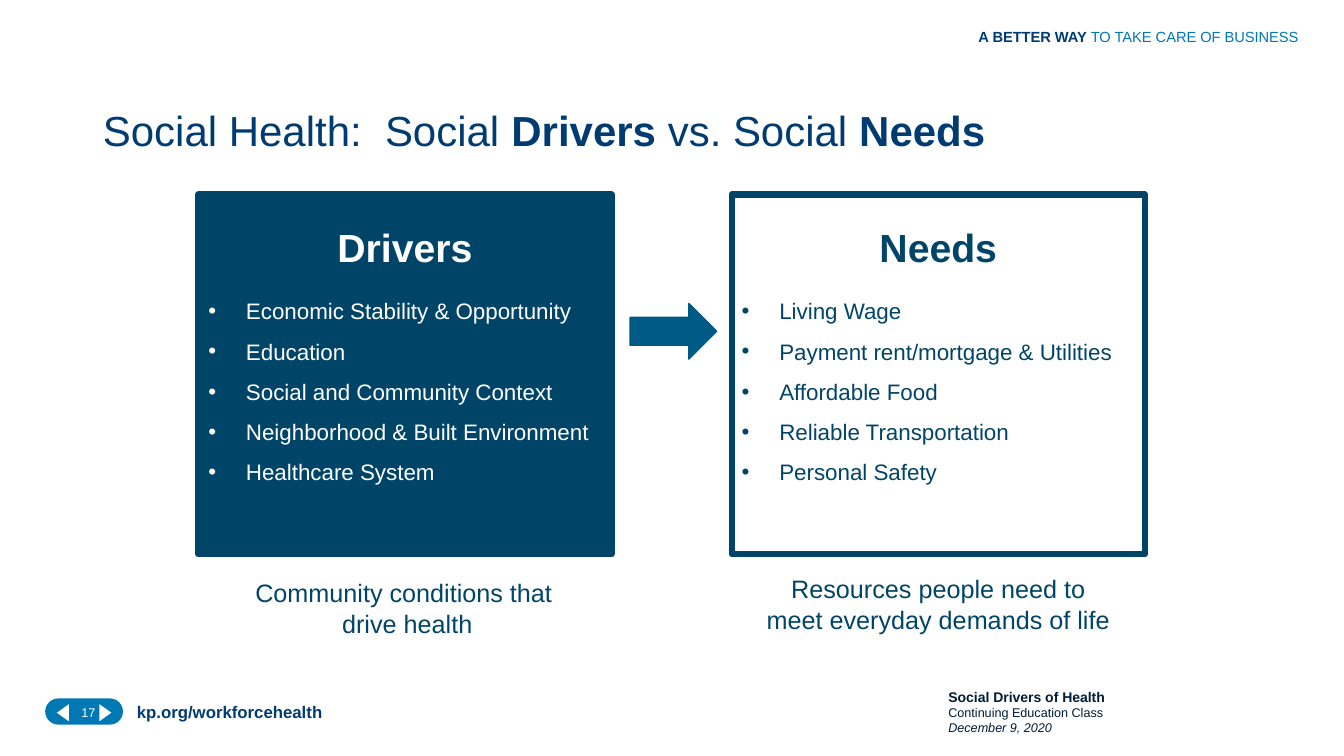
from dataclasses import dataclass

import lxml.etree
import pptx
import pptx.dml.color
import pptx.enum.shapes
import pptx.enum.text
import pptx.oxml.ns
import pptx.shapes.autoshape
import pptx.shapes.shapetree
import pptx.text.text
import pptx.util
from pptx.util import Cm

Align = pptx.enum.text.PP_ALIGN
Anchor = pptx.enum.text.MSO_ANCHOR
Preset = pptx.enum.shapes.MSO_SHAPE
Shapes = pptx.shapes.shapetree.SlideShapes
Frame = pptx.text.text.TextFrame


@dataclass(frozen=True)
class Theme:
    font: str = "Arial"
    white: str = "FFFFFF"
    deep_teal: str = "004568"
    arrow_fill: str = "005A86"
    arrow_line: str = "005984"
    navy: str = "003B72"
    title_navy: str = "003B71"
    ink: str = "001D38"
    bright_blue: str = "0078B3"
    title_size: float = 30
    heading_size: float = 28
    caption_size: float = 18
    bullet_size: float = 16
    site_size: float = 12
    tagline_size: float = 10.5
    course_size: float = 10
    small_size: float = 9


THEME = Theme()


@dataclass(frozen=True)
class Box:
    """Position and size in centimetres."""
    left: float
    top: float
    width: float
    height: float

    def lengths(self) -> tuple[Cm, Cm, Cm, Cm]:
        return Cm(self.left), Cm(self.top), Cm(self.width), Cm(self.height)


@dataclass(frozen=True)
class Span:
    text: str
    size: float
    color: str
    bold: bool = False
    italic: bool = False


Line = list[Span]


@dataclass(frozen=True)
class Panel:
    heading: str
    topics: list[str]
    box: Box
    fill: str
    text_color: str
    caption: str
    caption_box: Box


PANELS = [
    Panel("Drivers",
          ["Economic Stability & Opportunity", "Education", "Social and Community Context",
           "Neighborhood & Built Environment", "Healthcare System"],
          Box(5, 4.9, 10.41, 9.07), THEME.deep_teal, THEME.white,
          "Community conditions that\n drive health", Box(4.93, 14.43, 10.49, 1.8)),
    Panel("Needs",
          ["Living Wage", "Payment rent/mortgage & Utilities", "Affordable Food",
           "Reliable Transportation", "Personal Safety"],
          Box(18.44, 4.9, 10.41, 9.07), THEME.white, THEME.deep_teal,
          "Resources people need to meet everyday demands of life",
          Box(18.97, 14.33, 9.35, 1.8)),
]


def rgb(color: str) -> pptx.dml.color.RGBColor:
    return pptx.dml.color.RGBColor.from_string(color)


def write_lines(frame: Frame, lines: list[Line], align: Align = Align.LEFT) -> None:
    frame.word_wrap = True
    for index, line in enumerate(lines):
        paragraph = frame.paragraphs[0] if index == 0 else frame.add_paragraph()
        paragraph.alignment = align
        for span in line:
            run = paragraph.add_run()
            run.text = span.text
            run.font.name = THEME.font
            run.font.size = pptx.util.Pt(span.size)
            run.font.bold = span.bold
            run.font.italic = span.italic
            run.font.color.rgb = rgb(span.color)


def add_label(shapes: Shapes, box: Box, lines: list[Line],
              align: Align = Align.LEFT, flush_left: bool = False) -> None:
    frame = shapes.add_textbox(*box.lengths()).text_frame
    if flush_left:
        frame.margin_left = 0
    write_lines(frame, lines, align)


def add_block(shapes: Shapes, preset: Preset, box: Box, fill: str, outline: str = "",
              outline_points: float = 1) -> pptx.shapes.autoshape.Shape:
    block = shapes.add_shape(preset, *box.lengths())
    block.shadow.inherit = False
    block.fill.solid()
    block.fill.fore_color.rgb = rgb(fill)
    if outline:
        block.line.color.rgb = rgb(outline)
        block.line.width = pptx.util.Pt(outline_points)
    else:
        block.line.fill.background()
    return block


def add_bullet(paragraph: pptx.text.text._Paragraph) -> None:
    properties = paragraph._p.get_or_add_pPr()
    indent = Cm(0.95)
    properties.set("marL", str(indent))
    properties.set("indent", str(-indent))
    for tag, attribute, value in (("a:buFont", "typeface", THEME.font),
                                  ("a:buChar", "char", "•")):
        element = lxml.etree.SubElement(properties, pptx.oxml.ns.qn(tag))
        element.set(attribute, value)


def add_panel(shapes: Shapes, panel: Panel) -> None:
    card = add_block(shapes, Preset.RECTANGLE, panel.box, panel.fill, THEME.deep_teal, 4.5)
    frame = card.text_frame
    frame.vertical_anchor = Anchor.TOP
    heading = [Span(panel.heading, THEME.heading_size, panel.text_color, bold=True)]
    topics = [[Span(topic, THEME.bullet_size, panel.text_color)] for topic in panel.topics]
    write_lines(frame, [heading, *topics])
    for paragraph in frame.paragraphs:
        paragraph.line_spacing = 1.5
    frame.paragraphs[0].alignment = Align.CENTER
    frame.paragraphs[0].space_after = pptx.util.Pt(10)
    for paragraph in frame.paragraphs[1:]:
        add_bullet(paragraph)
    caption = [[Span(text, THEME.caption_size, THEME.deep_teal)]
               for text in panel.caption.split("\n")]
    add_label(shapes, panel.caption_box, caption, Align.CENTER)


def format_title(title: pptx.shapes.autoshape.Shape) -> None:
    title.left, title.top, title.width, title.height = Box(2.34, 2.01, 29.21, 2.54).lengths()
    title.text_frame.auto_size = pptx.enum.text.MSO_AUTO_SIZE.NONE
    title.text_frame.vertical_anchor = Anchor.MIDDLE
    parts = [("Social Health:  Social ", False), ("Drivers", True),
             (" vs. Social ", False), ("Needs", True)]
    write_lines(title.text_frame,
                [[Span(text, THEME.title_size, THEME.title_navy, bold) for text, bold in parts]])


def add_page_navigator(shapes: Shapes) -> None:
    pill = add_block(shapes, Preset.ROUNDED_RECTANGLE, Box(1.14, 17.6, 1.96, 0.66),
                     THEME.bright_blue)
    pill.adjustments[0] = 0.5
    for left, rotation in ((1.37, 270), (2.44, 90)):
        pointer = add_block(shapes, Preset.ISOSCELES_TRIANGLE, Box(left, 17.81, 0.43, 0.3),
                            THEME.white)
        pointer.rotation = rotation
    add_label(shapes, Box(1.8, 17.63, 1.63, 1.02),
              [[Span("17", THEME.small_size, THEME.white)]])


def main() -> None:
    deck = pptx.Presentation()
    deck.slide_width, deck.slide_height = Cm(33.87), Cm(19.05)
    slide = deck.slides.add_slide(deck.slide_layouts[5])
    shapes = slide.shapes
    format_title(shapes.title)
    add_page_navigator(shapes)
    add_label(shapes, Box(3.45, 17.55, 13.34, 0.76),
              [[Span("kp.org/workforcehealth", THEME.site_size, THEME.navy, bold=True)]],
              flush_left=True)
    for panel in PANELS:
        add_panel(shapes, panel)
    add_block(shapes, Preset.RIGHT_ARROW, Box(15.88, 7.65, 2.18, 1.4),
              THEME.arrow_fill, THEME.arrow_line)
    add_label(shapes, Box(23.65, 17.22, 5.36, 1.45), [
        [Span("Social Drivers of Health", THEME.course_size, THEME.ink, bold=True)],
        [Span("Continuing Education Class", THEME.small_size, THEME.ink)],
        [Span("December 9, 2020", THEME.small_size, THEME.ink, italic=True)],
    ])
    add_label(shapes, Box(24.66, 0.58, 8.6, 0.71), [[
        Span("A BETTER WAY ", THEME.tagline_size, THEME.navy, bold=True),
        Span("TO TAKE CARE OF BUSINESS", THEME.tagline_size, THEME.bright_blue),
    ]], flush_left=True)
    deck.save("out.pptx")


if __name__ == "__main__":
    main()
